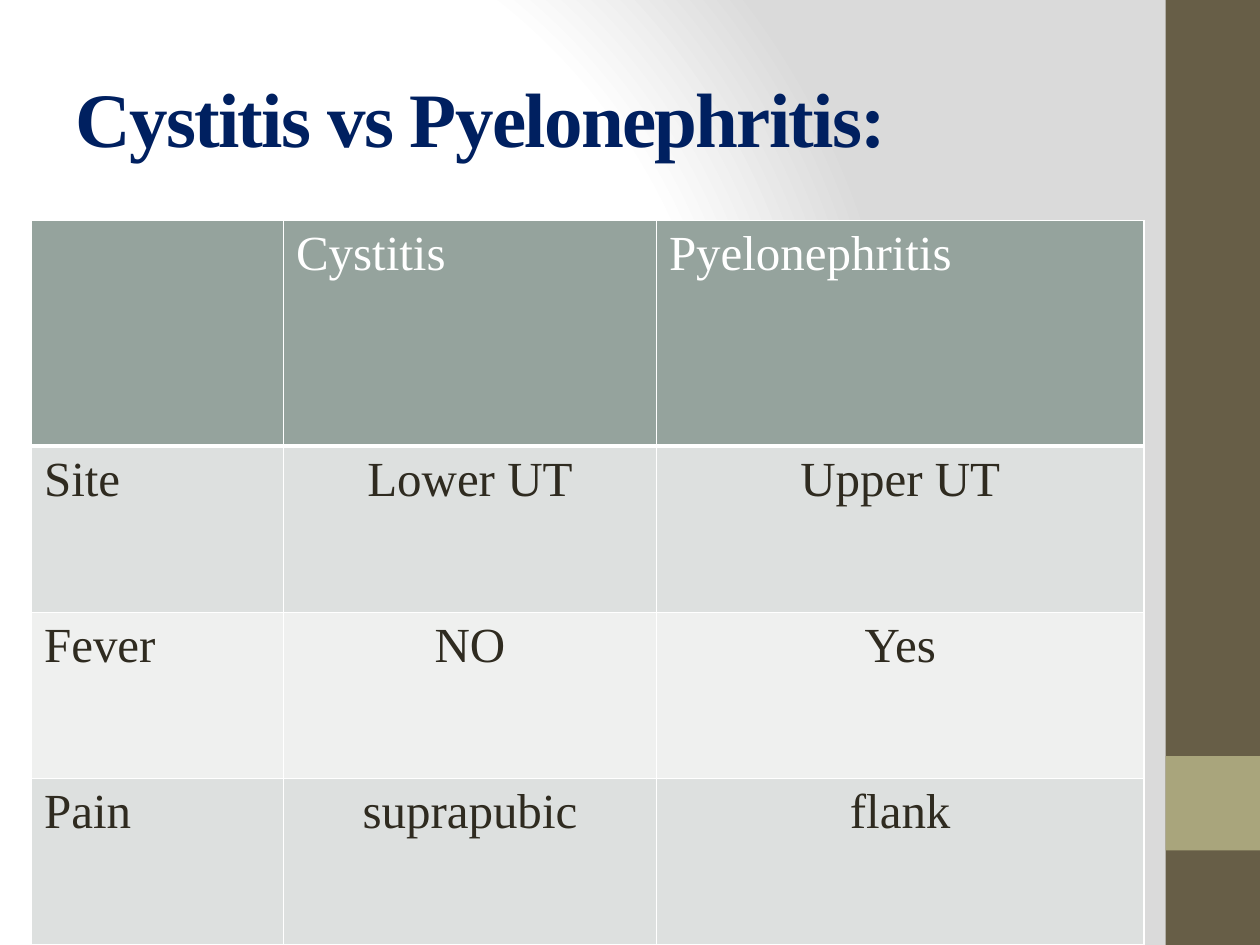
from lxml import etree
from pptx import Presentation
from pptx import util as u
from pptx.dml.color import RGBColor
from pptx.enum import shapes, text
from pptx.oxml.ns import qn

SCALE = 9144
FONT = "Times New Roman"
COLORS = {
    "white": "FFFFFF", "gray": "DADADA", "brown": "675E47", "olive": "A9A57C",
    "navy": "002060", "ink": "2F2B20", "head": "95A39D",
    "dark": "DDE0DF", "light": "EFF0EF",
}
COLS = [200, 296, 387]
ROWS = [179, 132, 132, 132]
DATA = [
    ["", "Cystitis", "Pyelonephritis"],
    ["Site", "Lower UT", "Upper UT"],
    ["Fever", "NO", "Yes"],
    ["Pain", "suprapubic", "flank"],
]


def px(n):
    return u.Emu(n * SCALE)


def box(*dims):
    return [px(n) for n in dims]


def rgb(name):
    return RGBColor.from_string(COLORS[name])


def node(parent, tag, **attrs):
    return etree.SubElement(parent, qn(tag), {k: str(v) for k, v in attrs.items()})


def set_back(slide):
    slide.background.fill.gradient()
    grad = slide.element.find(".//" + qn("a:gradFill"))
    for child in list(grad):
        grad.remove(child)
    stops = node(grad, "a:gsLst")
    for pos, name in [(0, "white"), (75, "white"), (100, "gray")]:
        stop = node(stops, "a:gs", pos=pos * 1000)
        node(stop, "a:srgbClr", val=COLORS[name])
    ring = node(grad, "a:path", path="circle")
    node(ring, "a:fillToRect", l=20000, t=50000, r=100000, b=50000)


def add_rect(slide, dims, color):
    rect = slide.shapes.add_shape(shapes.MSO_SHAPE.RECTANGLE, *box(*dims))
    rect.shadow.inherit = False
    rect.fill.solid()
    rect.fill.fore_color.rgb = rgb(color)
    rect.line.fill.background()


def style(para, size, color, bold=False):
    for run in para.runs:
        run.font.name = FONT
        run.font.size = u.Pt(size)
        run.font.bold = bold
        run.font.color.rgb = rgb(color)


def add_title(slide, words, dims):
    frame = slide.shapes.add_textbox(*box(*dims)).text_frame
    frame.word_wrap = True
    frame.vertical_anchor = text.MSO_ANCHOR.MIDDLE
    frame.text = words
    para = frame.paragraphs[0]
    style(para, 44, "navy", True)
    para.runs[0].font._element.set("spc", "-100")


def set_edges(cell, top, bottom):
    props = cell._tc.get_or_add_tcPr()
    for side, width in [("L", 1), ("R", 1), ("T", top), ("B", bottom)]:
        line = node(props, "a:ln" + side, w=u.Pt(width))
        fill = node(line, "a:solidFill")
        node(fill, "a:srgbClr", val=COLORS["white"])


def fill_cell(cell, words, row, col):
    set_edges(cell, 3 if row == 1 else 1, 3 if row == 0 else 1)
    cell.fill.solid()
    shade = "head" if row == 0 else "dark" if row % 2 else "light"
    cell.fill.fore_color.rgb = rgb(shade)
    cell.text_frame.text = words
    para = cell.text_frame.paragraphs[0]
    if row and col:
        para.alignment = text.PP_ALIGN.CENTER
    style(para, 28, "ink" if row else "white")


def add_grid(slide, left, top):
    dims = box(left, top, sum(COLS), sum(ROWS))
    grid = slide.shapes.add_table(len(ROWS), len(COLS), *dims).table
    for col, width in zip(grid.columns, COLS):
        col.width = px(width)
    for row, height in zip(grid.rows, ROWS):
        row.height = px(height)
    for r, line in enumerate(DATA):
        for c, words in enumerate(line):
            fill_cell(grid.cell(r, c), words, r, c)


def main():
    deck = Presentation()
    deck.slide_width, deck.slide_height = box(1000, 750)
    slide = deck.slides.add_slide(deck.slide_layouts[6])
    set_back(slide)
    add_rect(slide, (925, 0, 75, 750), "brown")
    add_rect(slide, (925, 600, 75, 75), "olive")
    add_title(slide, "Cystitis vs Pyelonephritis:", (50, 30, 833, 125))
    add_grid(slide, 25, 175)
    deck.save("out.pptx")


if __name__ == "__main__":
    main()
